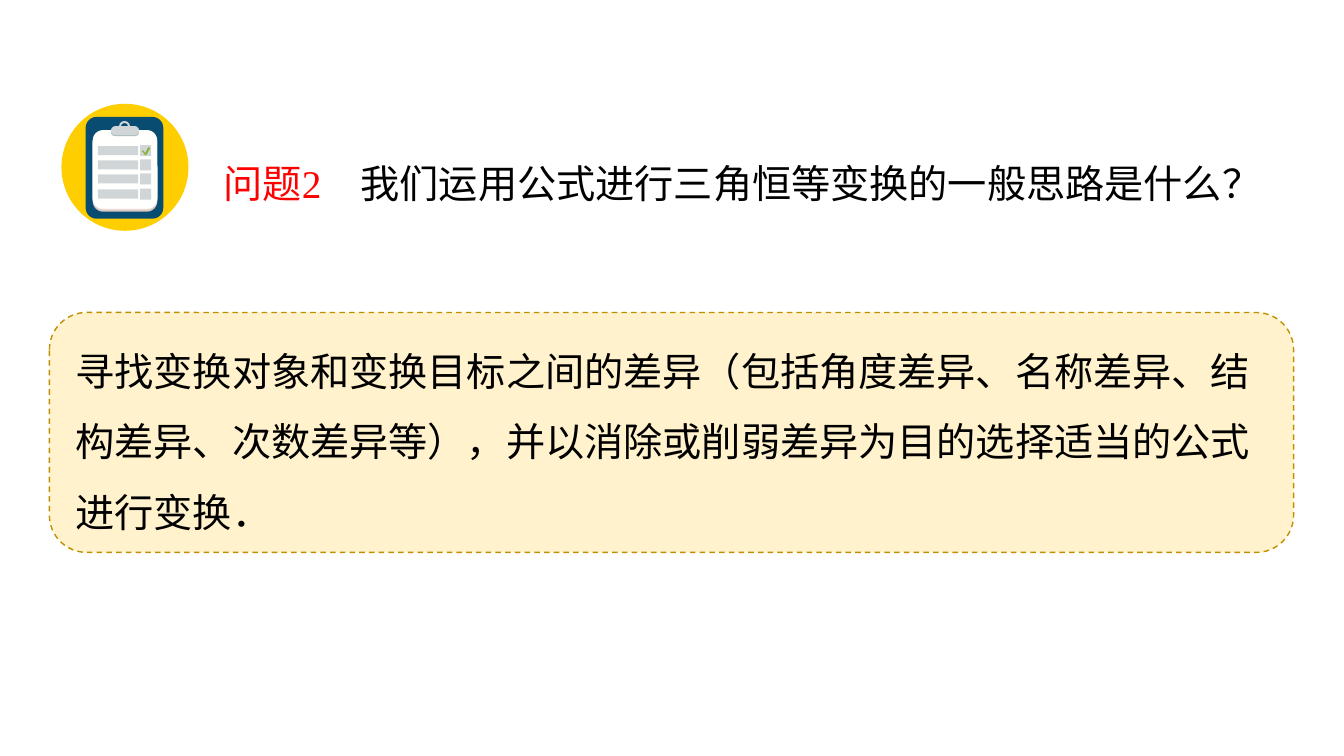
import pptx
import pptx.util
import pptx.dml.color
import pptx.enum.dml
import pptx.enum.shapes
import pptx.enum.text

PX = 9144
SHAPE = pptx.enum.shapes.MSO_SHAPE
COLORS = {
    "panel": "FFF2CC", "border": "BF9000", "text": "000000", "label": "FF0000",
    "disc": "FFCE00", "board": "094C72", "paper_shadow": "D6C7C3",
    "paper_edge": "F7EAE7", "paper": "FFFFFD", "clip_shadow": "ACBCC1",
    "gray": "D0D6D8", "tick": "89B238",
}


class SlideBuilder:
    def __init__(self, prs, font, size):
        self.slide = prs.slides.add_slide(prs.slide_layouts[6])
        self.shapes = self.slide.shapes
        self.font = font
        self.size = size

    def color(self, name):
        return pptx.dml.color.RGBColor.from_string(COLORS[name])

    def group(self):
        self.shapes = self.slide.shapes.add_group_shape().shapes

    def ungroup(self):
        self.shapes = self.slide.shapes

    def paint(self, sp, fill, line=None):
        sp.shadow.inherit = False
        sp.fill.solid()
        sp.fill.fore_color.rgb = self.color(fill)
        if line:
            sp.line.color.rgb = self.color(line)
            sp.line.width = pptx.util.Pt(1)
            sp.line.dash_style = pptx.enum.dml.MSO_LINE.DASH
        else:
            sp.line.fill.background()

    def shape(self, kind, box, fill, adj=None, line=None):
        sp = self.shapes.add_shape(kind, *(v * PX for v in box))
        if adj is not None:
            sp.adjustments[0] = adj
        self.paint(sp, fill, line)

    def outline(self, points, fill):
        builder = self.shapes.build_freeform(*points[0], scale=PX)
        builder.add_line_segments(points[1:], close=True)
        self.paint(builder.convert_to_shape(), fill)

    def text(self, box, runs):
        sp = self.shapes.add_textbox(*(v * PX for v in box))
        tf = sp.text_frame
        tf.word_wrap = True
        tf.auto_size = pptx.enum.text.MSO_AUTO_SIZE.SHAPE_TO_FIT_TEXT
        p = tf.paragraphs[0]
        p.line_spacing = 1.5
        for words, color in runs:
            r = p.add_run()
            r.text = words
            r.font.name = self.font
            r.font.size = pptx.util.Pt(self.size)
            r.font.color.rgb = self.color(color)


def main():
    prs = pptx.Presentation()
    prs.slide_width = 1333 * PX
    prs.slide_height = 750 * PX
    s = SlideBuilder(prs, "Times New Roman", 28)

    s.group()
    s.shape(SHAPE.ROUNDED_RECTANGLE, (49, 310, 1234, 238), "panel", 0.155, "border")
    s.text((65, 316, 1200, 222), [(
        "寻找变换对象和变换目标之间的差异（包括角度差异、名称差异、结构差异、次数差异等），"
        "并以消除或削弱差异为目的选择适当的公式进行变换．", "text")])
    s.ungroup()

    s.text((212, 130, 1030, 72), [
        ("问题2　", "label"),
        ("我们运用公式进行三角恒等变换的一般思路是什么？", "text")])

    s.group()
    s.shape(SHAPE.OVAL, (61, 103, 126, 126), "disc")
    s.shape(SHAPE.ROUNDED_RECTANGLE, (85, 116, 77, 101), "board", 0.14)
    for top, fill in ((132, "paper_shadow"), (130, "paper_edge"), (129, "paper")):
        s.shape(SHAPE.ROUNDED_RECTANGLE, (92, top, 64, 78), fill, 0.16)
    s.shape(SHAPE.ROUNDED_RECTANGLE, (110, 127, 28, 8), "clip_shadow", 0.5)
    s.shape(SHAPE.DONUT, (118, 120, 11, 11), "gray", 0.18)
    s.shape(SHAPE.ROUNDED_RECTANGLE, (110, 125, 28, 9), "gray", 0.5)
    for top in (145, 159, 173, 188):
        s.shape(SHAPE.RECTANGLE, (97, top, 40, 9), "gray")
        s.shape(SHAPE.RECTANGLE, (139, top - 1, 11, 11), "gray")
    s.outline([(141, 150), (142, 149), (144, 152), (147, 146),
               (149, 147), (145, 154), (144, 154)], "tick")

    prs.save("out.pptx")


if __name__ == "__main__":
    main()
